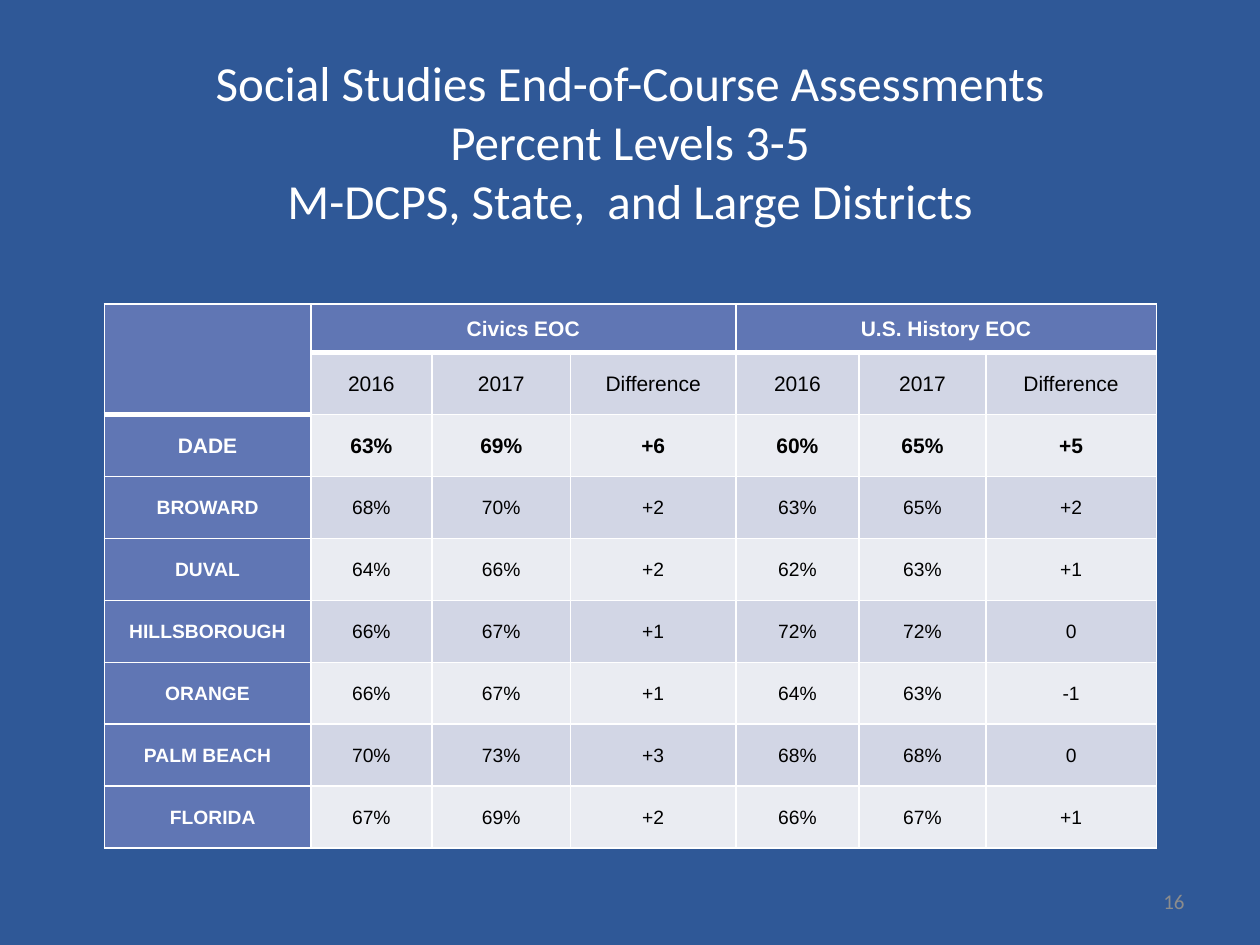
"""Build a slide with a table of social studies assessment results by district."""
from lxml.etree import SubElement
from pptx import Presentation
from pptx.dml.color import RGBColor
from pptx.enum.text import MSO_ANCHOR, PP_ALIGN
from pptx.oxml.ns import qn
from pptx.util import Pt

TITLE = ("Social Studies End-of-Course Assessments\v"
         "Percent Levels 3-5\v"
         "M-DCPS, State,  and Large Districts")
EXAMS = ["Civics EOC", "U.S. History EOC"]
MEASURES = ["2016", "2017", "Difference"]
DISTRICTS = [
    ("DADE", "63%", "69%", "+6", "60%", "65%", "+5"),
    ("BROWARD", "68%", "70%", "+2", "63%", "65%", "+2"),
    ("DUVAL", "64%", "66%", "+2", "62%", "63%", "+1"),
    ("HILLSBOROUGH", "66%", "67%", "+1", "72%", "72%", "0"),
    ("ORANGE", "66%", "67%", "+1", "64%", "63%", "-1"),
    ("PALM BEACH", "70%", "73%", "+3", "68%", "68%", "0"),
    ("FLORIDA", "67%", "69%", "+2", "66%", "67%", "+1"),
]
PAGE = "16"
COL_WIDTHS = [118, 69.3, 79.2, 94.4, 70.4, 72.6, 97.3]
HEADER_HEIGHT, ROW_HEIGHT = 28, 35.4
WHITE, BLACK, HEAD = "FFFFFF", "000000", "6076B4"
BANDS = ["EAECF2", "D2D6E5"]


def rgb(value):
    """Turn a hex string into a colour."""
    return RGBColor.from_string(value)


def write(tf, text, font="Arial", size=12, color=BLACK, bold=False,
          align=PP_ALIGN.CENTER, spacing=None):
    """Put formatted text into a text frame."""
    p = tf.paragraphs[0]
    p.text = text
    p.alignment = align
    if spacing:
        p.line_spacing = spacing
    for r in p.runs:
        r.font.name, r.font.size, r.font.bold = font, Pt(size), bold
        r.font.color.rgb = rgb(color)


def draw_borders(cell, **widths):
    """Give a cell white borders with the given widths."""
    tc_pr = cell._tc.get_or_add_tcPr()
    for side in "LRTB":
        ln = SubElement(tc_pr, qn(f"a:ln{side}"), w=str(Pt(widths.get(side, 1))))
        fill = SubElement(ln, qn("a:solidFill"))
        SubElement(fill, qn("a:srgbClr"), val=WHITE)


def add_results(s):
    """Add the results table."""
    rows = [["", EXAMS[0], "", "", EXAMS[1], "", ""],
            ["", *MEASURES * len(EXAMS)], *DISTRICTS]
    heights = [HEADER_HEIGHT] + [ROW_HEIGHT] * (len(rows) - 1)
    frame = s.shapes.add_table(len(rows), len(COL_WIDTHS), Pt(59.6), Pt(173.6),
                               Pt(sum(COL_WIDTHS)), Pt(sum(heights)))
    table = frame.table
    for column, width in zip(table.columns, COL_WIDTHS):
        column.width = Pt(width)
    for row, height in zip(table.rows, heights):
        row.height = Pt(height)

    for i, values in enumerate(rows):
        for j, text in enumerate(values):
            cell = table.cell(i, j)
            is_head = i == 0 or j == 0
            last_head = 1 if j == 0 else 0
            draw_borders(cell, T=3 if i == last_head + 1 else 1,
                         B=3 if i <= last_head else 1)
            cell.fill.solid()
            cell.fill.fore_color.rgb = rgb(HEAD if is_head else BANDS[i % 2])
            cell.vertical_anchor = MSO_ANCHOR.MIDDLE
            cell.margin_left = Pt(11 if text == "FLORIDA" else 5)
            cell.margin_right = Pt(5)
            cell.margin_top = cell.margin_bottom = 0
            if text:
                write(cell.text_frame, text, size=12 if i < 3 else 11,
                      color=WHITE if is_head else BLACK,
                      bold=is_head or i == 2, spacing=1.07)

    table.cell(0, 0).merge(table.cell(1, 0))
    for first in (1, 4):
        table.cell(0, first).merge(table.cell(0, first + 2))


def main():
    """Build and save the slide."""
    prs = Presentation()
    prs.slide_width, prs.slide_height = Pt(720), Pt(540)
    s = prs.slides.add_slide(prs.slide_layouts[5])
    s.background.fill.solid()
    s.background.fill.fore_color.rgb = rgb("2F5897")

    title = s.shapes.title
    title.left, title.top, title.width, title.height = Pt(36), Pt(21.6), Pt(648), Pt(118)
    title.text_frame.vertical_anchor = MSO_ANCHOR.MIDDLE
    write(title.text_frame, TITLE, font="Calibri", size=28, color=WHITE)

    add_results(s)

    sp = s.shapes.add_textbox(Pt(516), Pt(500.5), Pt(168), Pt(28.8))
    sp.text_frame.word_wrap = True
    sp.text_frame.vertical_anchor = MSO_ANCHOR.MIDDLE
    write(sp.text_frame, PAGE, font="Calibri", color="8C8C8C", align=PP_ALIGN.RIGHT)
    prs.save("out.pptx")


if __name__ == "__main__":
    main()
